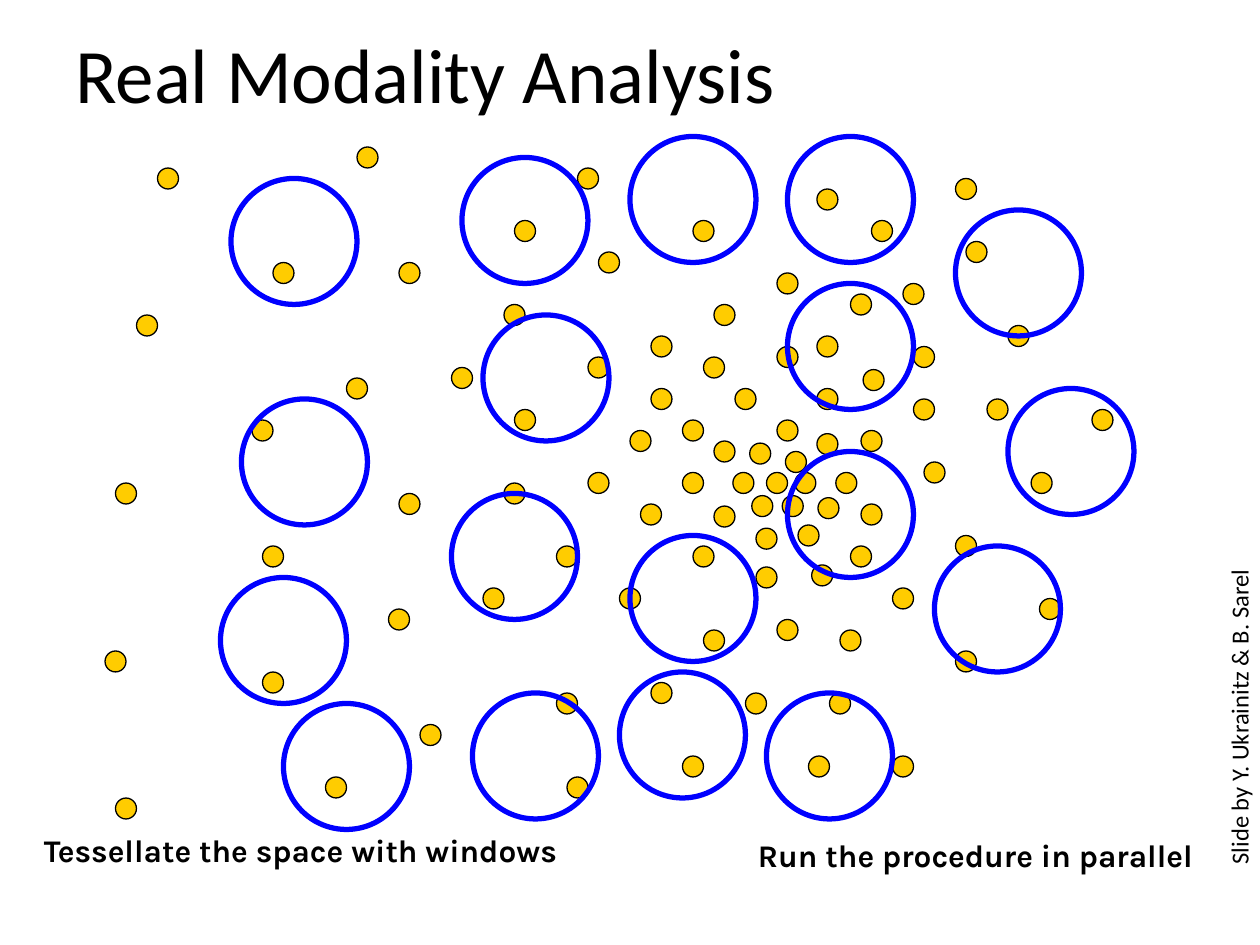
import pptx
import pptx.util
import pptx.dml.color
import pptx.enum.shapes
import pptx.enum.text

PX = 914400 // 120
WIDE, HIGH = 1200, 900
GRID = 10
DOT, RING = 2 * GRID, 12 * GRID

CLOUD = {
    14: [34], 16: [15, 55], 17: [91], 21: [49, 66, 83], 23: [92], 24: [57],
    25: [26, 38], 26: [74], 27: [86], 28: [81], 29: [48, 68], 30: [13],
    31: [96], 32: [62], 33: [74, 87], 34: [56, 67], 35: [43], 36: [33],
    37: [62, 70], 38: [87, 94], 39: [49, 104], 40: [24, 65, 74], 41: [60, 82],
    42: [68], 44: [88], 45: [56, 65, 73], 46: [11, 48], 47: [38], 48: [61, 82],
    50: [76], 51: [91], 52: [25, 53, 66, 81], 54: [72], 56: [46, 59, 85],
    57: [99], 58: [37], 59: [74], 60: [67, 80], 62: [10, 91], 64: [25],
    65: [62], 66: [53, 71, 79], 69: [40], 72: [65, 77, 85], 74: [31, 54], 76: [11],
}
MODE = {
    18: [77.8], 32: [77.8], 35.2: [82.2], 37: [77.8], 41.3: [77.8], 42.2: [71.4],
    43: [74.8], 45: [69.8, 75.7, 79.6, 98.2], 47.2: [71.6, 74.5], 47.4: [77.9],
    48.2: [68], 50.3: [72], 53.8: [77.3],
}
WINDOWS = {
    "west": [(22, 17), (23, 38), (21, 55), (27, 67)],
    "inner west": [(44, 15), (46, 30), (43, 47), (45, 66)],
    "centre": [(60, 13), (60, 51), (59, 64)],
    "inner east": [(75, 13), (75, 27), (75, 43), (73, 66)],
    "east": [(91, 20), (96, 37), (89, 52)],
}


def hue(code):
    return pptx.dml.color.RGBColor.from_string(code)


def snap(cell):
    return round(cell * GRID)


def write(frame, text, size=18, font="Calibri", bold=False, color="000000", lead=None):
    para = frame.paragraphs[0]
    para.line_spacing = lead
    run = para.add_run()
    run.text = text
    run.font.size = pptx.util.Pt(size)
    run.font.name = font
    run.font.bold = bold
    run.font.color.rgb = hue(color)


class Deck:
    """Hold the style and the current slide, and draw each kind of element."""

    gold, blue, black = "FFCC00", "0000FF", "000000"

    def __init__(self):
        self.file = pptx.Presentation()
        self.file.slide_width = WIDE * PX
        self.file.slide_height = HIGH * PX
        self.slide = self.file.slides.add_slide(self.file.slide_layouts[6])

    def round(self, col, row, size, line, width, fill=None):
        oval = pptx.enum.shapes.MSO_SHAPE.OVAL
        place = [n * PX for n in (snap(col), snap(row), size, size)]
        shape = self.slide.shapes.add_shape(oval, *place)
        shape.shadow.inherit = False
        if fill:
            shape.fill.solid()
            shape.fill.fore_color.rgb = hue(fill)
        else:
            shape.fill.background()
        shape.line.color.rgb = hue(line)
        shape.line.width = pptx.util.Pt(width)

    def dots(self, rows):
        for row, cols in rows.items():
            for col in cols:
                self.round(col, row, DOT, self.black, 0.75, self.gold)

    def rings(self, bands):
        for band in bands.values():
            for col, row in band:
                self.round(col, row, RING, self.blue, 3)

    def label(self, text, left, top, width, height, wrap=True, turn=0, middle=False, **style):
        place = [n * PX for n in (left, top, width, height)]
        box = self.slide.shapes.add_textbox(*place)
        box.rotation = turn
        box.text_frame.word_wrap = wrap
        if middle:
            box.text_frame.vertical_anchor = pptx.enum.text.MSO_ANCHOR.MIDDLE
        write(box.text_frame, text, **style)


def main():
    deck = Deck()
    deck.dots(MODE)
    deck.dots(CLOUD)
    deck.rings(WINDOWS)
    note = dict(font="Karla", bold=True)
    deck.label("Tessellate the space with windows", 30, 786, 550, 48, **note)
    deck.label("Run the procedure in parallel", 710, 790, 440, 48, wrap=False, **note)
    deck.label("Slide by Y. Ukrainitz & B. Sarel", 1000, 634, 361, 41, turn=270, size=14)
    deck.label("Real Modality Analysis", 60, 0, 1080, 150, middle=True, size=44, lead=0.9)
    deck.file.save("out.pptx")


if __name__ == "__main__":
    main()
